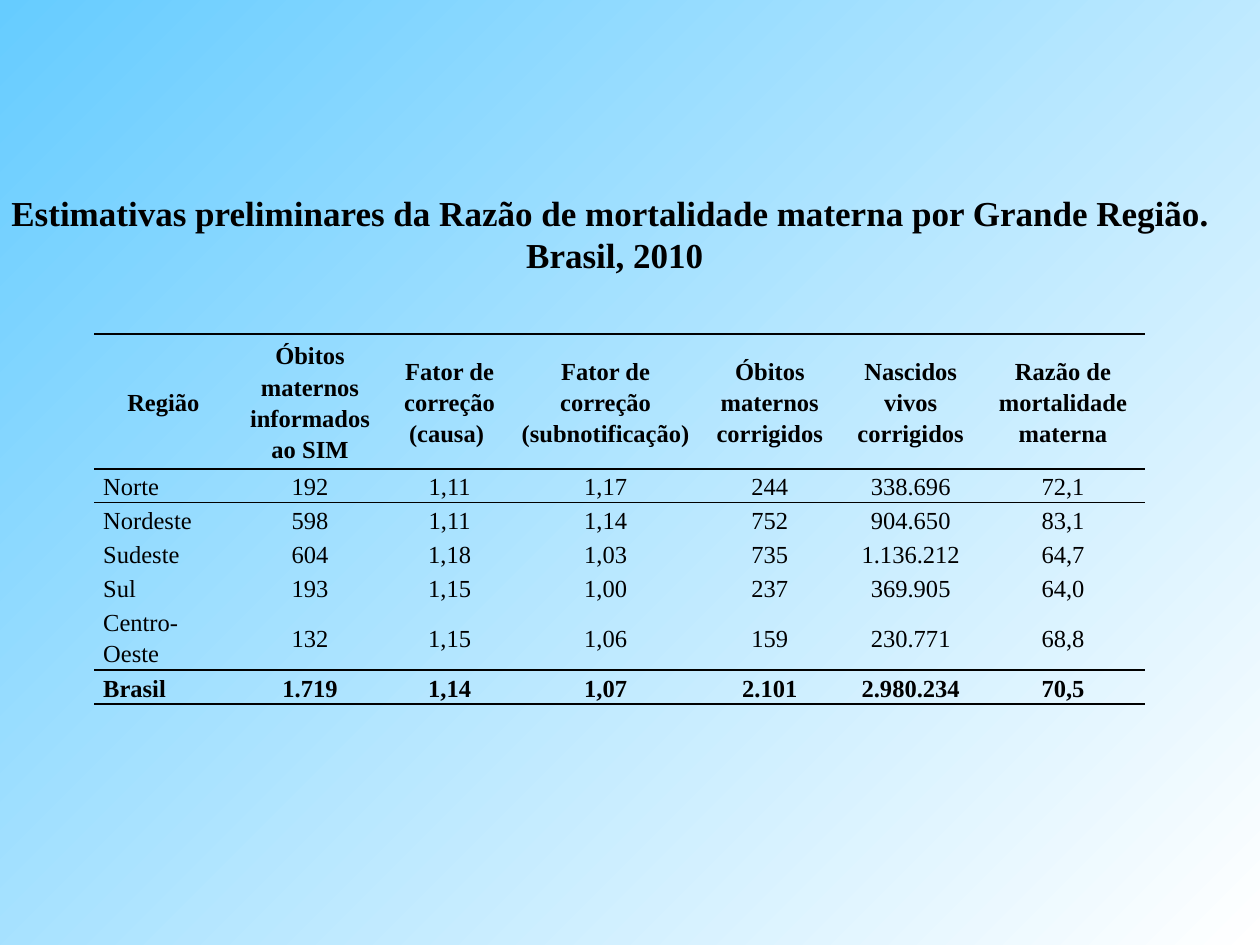
from typing import NamedTuple

from lxml.etree import SubElement
from pptx import Presentation
from pptx.dml.color import RGBColor
from pptx.enum.text import MSO_ANCHOR as Anchor, PP_ALIGN as Align
from pptx.oxml.ns import qn
from pptx.util import Cm, Pt

SKY = RGBColor(0x66, 0xCC, 0xFF)
WHITE = RGBColor(0xFF, 0xFF, 0xFF)
BLACK = RGBColor(0x00, 0x00, 0x00)
FONT = "Times New Roman"
PLAIN_TABLE_STYLE = "{2D5ABB26-0587-4C30-8999-92F81FD0307C}"


class Row(NamedTuple):
    height: float
    texts: tuple[str, ...]
    bold: bool = False
    rules: tuple[str, ...] = ()  # "T" above, "B" below


COLUMN_WIDTHS = (2.79, 3.12, 2.51, 3.78, 2.84, 2.84, 3.3)
HEADER = Row(2.72, (
    "Região", "Óbitos maternos informados ao SIM", "Fator de correção (causa) ",
    "Fator de correção (subnotificação)", "Óbitos maternos corrigidos",
    "Nascidos vivos corrigidos", "Razão de mortalidade materna",
), True, ("T", "B"))
BODY = (
    Row(0.68, ("Norte", "192", "1,11", "1,17", "244", "338.696", "72,1"), rules=("T",)),
    Row(0.68, ("Nordeste", "598", "1,11", "1,14", "752", "904.650", "83,1")),
    Row(0.68, ("Sudeste", "604", "1,18", "1,03", "735", "1.136.212", "64,7")),
    Row(0.68, ("Sul", "193", "1,15", "1,00", "237", "369.905", "64,0")),
    Row(1.34, ("Centro-Oeste", "132", "1,15", "1,06", "159", "230.771", "68,8"), rules=("B",)),
    Row(0.68, ("Brasil", "1.719", "1,14", "1,07", "2.101", "2.980.234", "70,5"), True, ("T", "B")),
)
ROWS = (HEADER, *BODY)
TITLE = (
    "Estimativas preliminares da Razão de mortalidade materna por Grande Região. ",
    "Brasil, 2010",
)


def style_paragraph(para, size: int, bold: bool, align=Align.CENTER) -> None:
    para.alignment = align
    font = para.font
    font.name, font.size, font.bold = FONT, Pt(size), bold
    font.color.rgb = BLACK


def paint_background(page) -> None:
    fill = page.background.fill
    fill.gradient()
    fill.gradient_angle = 315
    for stop, color in zip(fill.gradient_stops, (SKY, WHITE)):
        stop.color.rgb = color


def add_title(page) -> None:
    box = page.shapes.add_textbox(Cm(-0.1), Cm(3.73), Cm(24.99), Cm(3))
    frame = box.text_frame
    frame.word_wrap = False
    frame.text = "\n".join(TITLE)
    for para in frame.paragraphs:
        style_paragraph(para, 20, True)


def add_rules(cell, sides: tuple[str, ...]) -> None:
    """Draw the listed cell borders; they must precede the cell's fill in the XML."""
    properties = cell._tc.get_or_add_tcPr()
    for side in sides:
        line = SubElement(properties, qn(f"a:ln{side}"), w=str(Pt(1)))
        color = SubElement(SubElement(line, qn("a:solidFill")), qn("a:srgbClr"))
        color.set("val", str(BLACK))


def fill_cell(cell, text: str, row: Row, is_region: bool) -> None:
    cell.margin_left = cell.margin_right = Cm(0.18)
    cell.margin_top = cell.margin_bottom = 0
    cell.vertical_anchor = Anchor.MIDDLE
    add_rules(cell, row.rules)
    cell.fill.background()
    cell.text = text
    para = cell.text_frame.paragraphs[0]
    is_header = row is HEADER
    align = Align.LEFT if is_region and not is_header else Align.CENTER
    style_paragraph(para, 14, row.bold, align)
    para.line_spacing = 1.15
    if is_header:
        para.space_before = para.space_after = Pt(6)


def add_estimates(page) -> None:
    frame = page.shapes.add_table(
        len(ROWS), len(COLUMN_WIDTHS), Cm(1.9), Cm(6.73),
        Cm(sum(COLUMN_WIDTHS)), Cm(sum(row.height for row in ROWS)))
    table = frame.table
    table.first_row = table.horz_banding = False
    table._tbl.tblPr.find(qn("a:tableStyleId")).text = PLAIN_TABLE_STYLE
    for column, width in zip(table.columns, COLUMN_WIDTHS):
        column.width = Cm(width)
    for table_row, row in zip(table.rows, ROWS):
        table_row.height = Cm(row.height)
        for index, (cell, text) in enumerate(zip(table_row.cells, row.texts)):
            fill_cell(cell, text, row, index == 0)


def main() -> None:
    deck = Presentation()
    deck.slide_width, deck.slide_height = Cm(25.4), Cm(19.05)
    page = deck.slides.add_slide(deck.slide_layouts[6])
    paint_background(page)
    add_estimates(page)
    add_title(page)
    deck.save("out.pptx")


if __name__ == "__main__":
    main()
